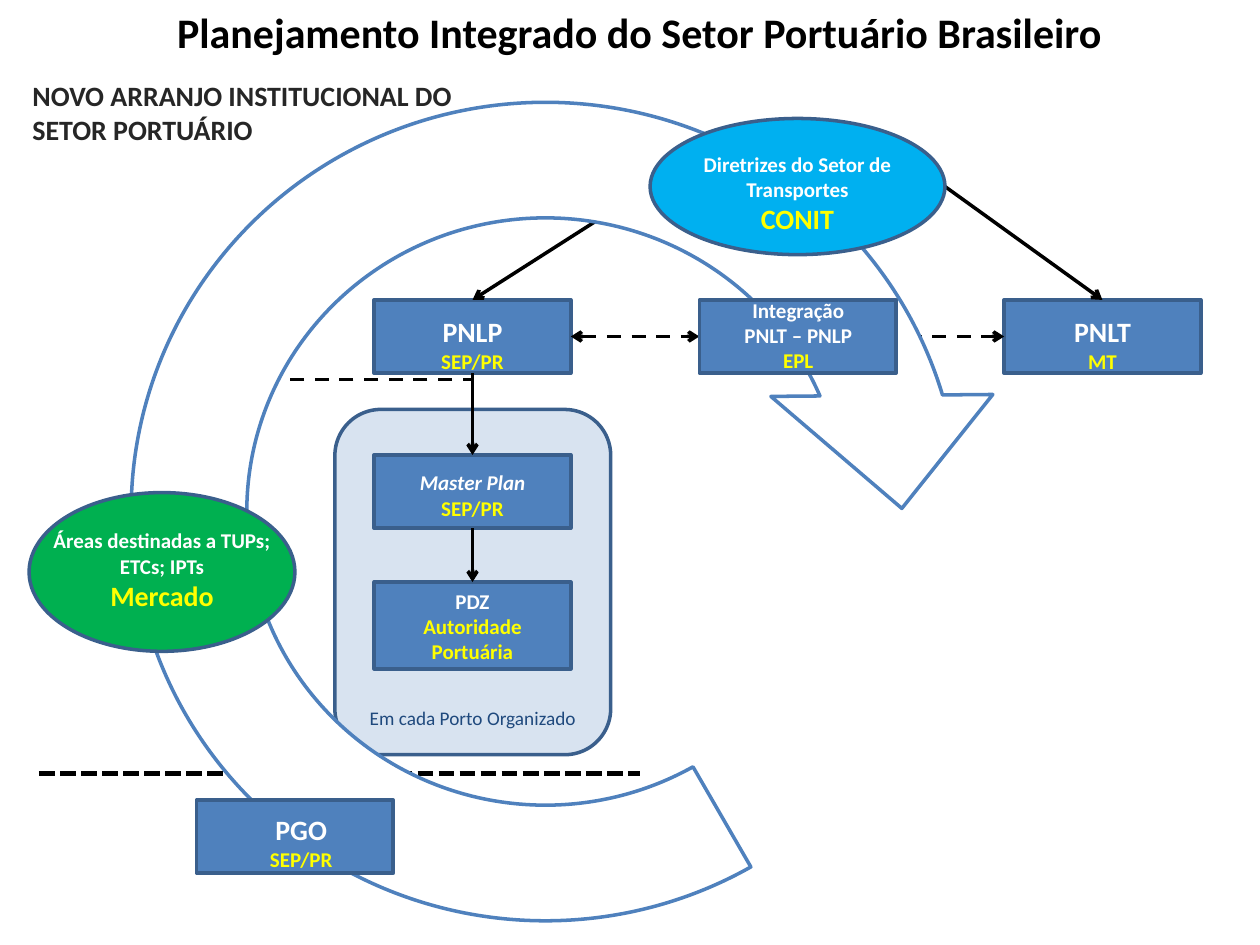
"""Build the slide on integrated planning of the Brazilian port sector."""
from lxml.etree import SubElement
from pptx import Presentation
from pptx.dml.color import RGBColor
from pptx.enum.dml import MSO_LINE
from pptx.enum.shapes import MSO_CONNECTOR, MSO_SHAPE
from pptx.enum.text import MSO_AUTO_SIZE, PP_ALIGN
from pptx.oxml.ns import qn
from pptx.util import Pt

WHITE, YELLOW, BLACK = "FFFFFF", "FFFF00", "000000"
BLUE, RIM = "4F81BD", "3A5F8C"
WIDE, HIGH = 112.4, 41.8
LEFT, MID, RIGHT = 213.8, 399.6, 573.8
ROW = 171.4
HUB = LEFT + WIDE / 2
TOP, WEST, BASE, EAST = range(4)


def tint(code):
    """Return the colour for a hex string."""
    return RGBColor.from_string(code)


def block(slide, kind, x, y, w, h, fill=BLUE, rim=RIM):
    """Add a filled and outlined preset shape."""
    shape = slide.shapes.add_shape(kind, Pt(x), Pt(y), Pt(w), Pt(h))
    shape.shadow.inherit = False
    shape.fill.solid()
    shape.fill.fore_color.rgb = tint(fill)
    shape.line.color.rgb = tint(rim)
    shape.line.width = Pt(2)
    return shape


def box(slide, x, y, h=HIGH):
    """Add a plan rectangle of the common width."""
    return block(slide, MSO_SHAPE.RECTANGLE, x, y, WIDE, h)


def note(slide, x, y, w, h, *lines, bold=True, align=PP_ALIGN.CENTER):
    """Add a text box with one paragraph per (text, size, colour)."""
    area = slide.shapes.add_textbox(Pt(x), Pt(y), Pt(w), Pt(h))
    frame = area.text_frame
    frame.word_wrap = True
    frame.auto_size = MSO_AUTO_SIZE.SHAPE_TO_FIT_TEXT
    for spot, (text, size, code) in enumerate(lines):
        para = frame.add_paragraph() if spot else frame.paragraphs[0]
        para.text = text
        para.alignment = align
        font = para.font
        font.name, font.size, font.bold = "Calibri", Pt(size), bold
        font.color.rgb = tint(code)
    return frame


def link(slide, start, stop, ends=("tailEnd",), dash=None, width=2,
         kind=MSO_CONNECTOR.STRAIGHT):
    """Add a black connector with open arrowheads at the given ends."""
    wire = slide.shapes.add_connector(kind, *map(Pt, start + stop))
    wire.line.color.rgb = tint(BLACK)
    wire.line.width = Pt(width)
    if dash:
        wire.line.dash_style = dash
    props = wire._element.spPr
    for end in ends:
        SubElement(props.find(qn("a:ln")), qn(f"a:{end}"), type="arrow")
    SubElement(props, qn("a:effectLst"))
    return wire


def bend(slide):
    """Add the dashed elbow from the national plan to the market."""
    wire = link(slide, (148.3, 159.1), (214.5, 336.2), dash=MSO_LINE.DASH,
                kind=MSO_CONNECTOR.ELBOW)
    props = wire._element.spPr
    props.find(qn("a:xfrm")).set("rot", "5400000")
    geom = props.find(qn("a:prstGeom"))
    guides = geom.find(qn("a:avLst"))
    if guides is None:
        guides = SubElement(geom, qn("a:avLst"))
    SubElement(guides, qn("a:gd"), name="adj1", fmla="val 3700")


def port(slide):
    """Add the panel for each port and return its two plan boxes."""
    panel = block(slide, MSO_SHAPE.ROUNDED_RECTANGLE, 191.4, 234, 157.6, 197.3)
    color = panel._element.spPr.find(qn("a:solidFill")).find(qn("a:srgbClr"))
    SubElement(color, qn("a:alpha"), val="22000")
    zone = box(slide, LEFT, 332.6, 49.7)
    master = box(slide, LEFT, 260)
    link(slide, (22.3, 442.1), (365.8, 442.1), (), MSO_LINE.SQUARE_DOT, 3)
    frame = note(slide, LEFT, 265, WIDE, 33.8, ("Master Plan ", 12, WHITE))
    para = frame.paragraphs[0]
    para.runs[0].font.italic = True
    owner = para.add_run()
    owner.text = "SEP/PR"
    owner.font.color.rgb = tint(YELLOW)
    note(slide, LEFT, 332.6, WIDE, 46.8, ("PDZ", 12, WHITE),
         ("Autoridade Portuária", 12, YELLOW))
    return master, zone


def plan(slide, x, y, name, owner):
    """Add the name of a plan above its owner."""
    note(slide, x, y, WIDE, 38.2, (name, 16, WHITE), (owner, 12, YELLOW))


def oval(slide, x, y, w, h, fill, drop, text, name):
    """Add an ellipse with a caption and a highlighted name."""
    block(slide, MSO_SHAPE.OVAL, x, y, w, h, fill)
    note(slide, x, y + drop, w, 54, (text, 12, WHITE), (name, 16, YELLOW))


def main():
    """Build and save the slide."""
    deck = Presentation()
    deck.slide_width, deck.slide_height = Pt(720), Pt(540)
    slide = deck.slides.add_slide(deck.slide_layouts[6])

    master, zone = port(slide)
    pnlt, pnlp = box(slide, RIGHT, ROW), box(slide, LEFT, ROW)
    plan(slide, LEFT, 176.4, "PNLP", "SEP/PR")
    plan(slide, RIGHT, 176.4, "PNLT", "MT")

    level = ROW + HIGH / 2
    both = ("headEnd", "tailEnd")
    link(slide, (371.5, 106.6), (HUB, ROW)).end_connect(pnlp, TOP)
    link(slide, (540, 106.6), (RIGHT + WIDE / 2, ROW)).end_connect(pnlt, TOP)
    near = link(slide, (LEFT + WIDE, level), (MID, level), both, MSO_LINE.DASH)
    far = link(slide, (MID + WIDE, level), (RIGHT, level), both, MSO_LINE.DASH)
    for upper, lower in ((pnlp, master), (master, zone)):
        wire = link(slide, (HUB, ROW), (HUB, level))
        wire.begin_connect(upper, BASE)
        wire.end_connect(lower, TOP)
    bend(slide)
    note(slide, 191.4, 400.3, 157.6, 18.7,
         ("Em cada Porto Organizado", 11, "1F497D"), bold=False)

    arc = block(slide, MSO_SHAPE.CIRCULAR_ARROW, 44.6, 28.1, 534.2, 528.5,
                WHITE, BLUE)
    for spot, value in enumerate((0.125, 11.123, 204.577, 35.982, 0.12)):
        arc.adjustments[spot] = value

    note(slide, 11.5, 41.5, 283, 46,
         ("NOVO ARRANJO INSTITUCIONAL DO SETOR PORTUÁRIO", 16, "262626"),
         align=PP_ALIGN.LEFT)
    note(slide, 31, 0, 668.9, 36,
         ("Planejamento Integrado do Setor Portuário Brasileiro", 24, BLACK))
    oval(slide, 16.6, 281.5, 151.9, 90.7, "00B050", 16.6,
         "Áreas destinadas a TUPs; ETCs; IPTs", "Mercado")
    oval(slide, 371.5, 67.7, 168.5, 77.8, "00B0F0", 15.1,
         "Diretrizes do Setor de Transportes", "CONIT")

    epl = box(slide, MID, ROW)
    near.begin_connect(pnlp, EAST)
    near.end_connect(epl, WEST)
    far.begin_connect(epl, EAST)
    far.end_connect(pnlt, WEST)
    note(slide, 405.4, 166.3, 101.5, 51.1, ("Integração", 12, WHITE),
         ("PNLT – PNLP", 12, WHITE), ("EPL", 12, YELLOW))
    box(slide, 112.3, 457.2)
    plan(slide, 115.9, 460.8, "PGO", "SEP/PR")
    deck.save("out.pptx")


if __name__ == "__main__":
    main()
